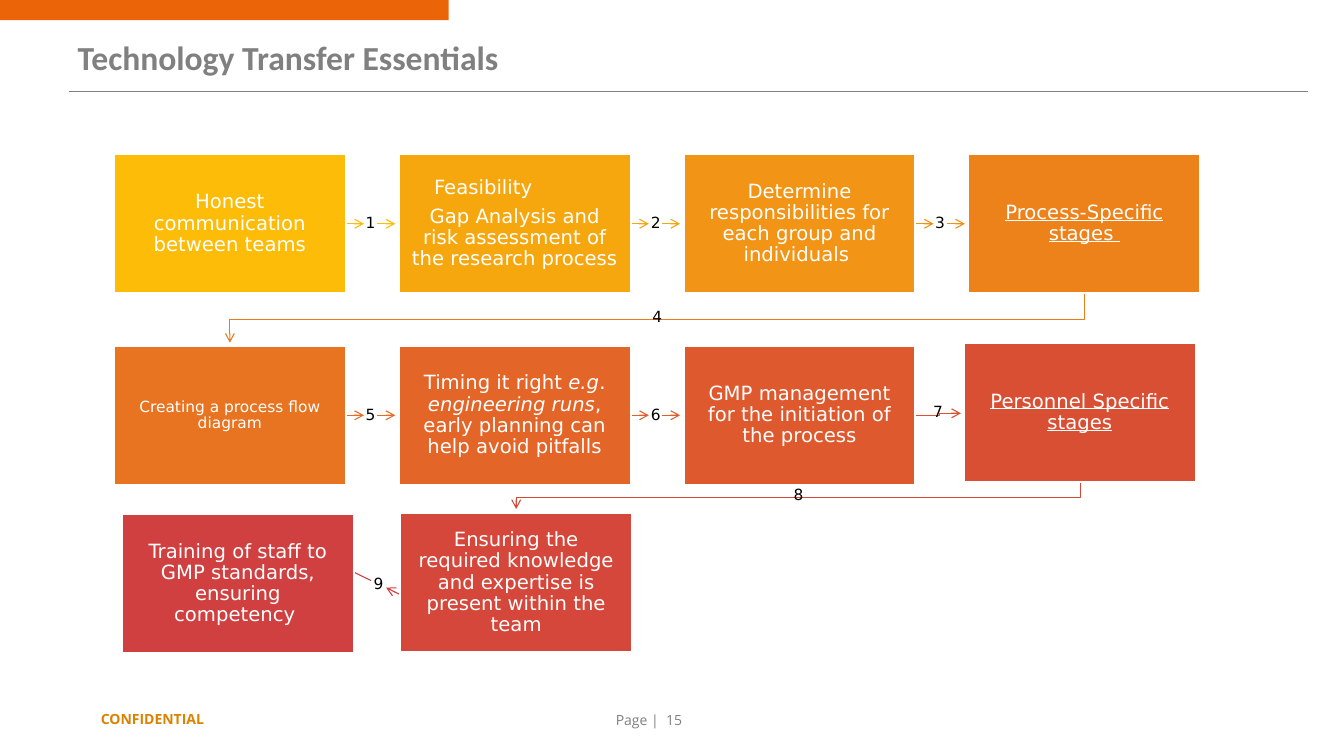
from lxml import etree
from pptx import Presentation
from pptx.dml.color import RGBColor
from pptx.enum import shapes, text
from pptx.oxml import ns
from pptx.util import Inches, Pt

COLORS = {"accent": "EC6408", "gray": "808080", "confidential": "DB8300",
          "white": "FFFFFF", "black": "000000"}
BOX_WIDTH, BOX_HEIGHT = 2.3, 1.38
COLUMNS = [1.13 + 2.825 * i for i in range(4)]
ROWS = [1.53, 3.43]

prs = Presentation()
prs.slide_width, prs.slide_height = Inches(13.33), Inches(7.5)
slide = prs.slides.add_slide(prs.slide_layouts[5])


def style_line(item, color, width, arrow=False):
    item.line.color.rgb = RGBColor.from_string(color)
    item.line.width = Pt(width)
    if arrow:
        etree.SubElement(item.line._get_or_add_ln(), ns.qn("a:tailEnd"), type="arrow")
    if not item._element.spPr.findall(ns.qn("a:effectLst")):
        etree.SubElement(item._element.spPr, ns.qn("a:effectLst"))


def write(frame, lines, font, size, color, align, margins=(0.1, 0.05), bold=False):
    frame.word_wrap = True
    frame.vertical_anchor = text.MSO_ANCHOR.MIDDLE
    frame.margin_left = frame.margin_right = Inches(margins[0])
    frame.margin_top = frame.margin_bottom = Inches(margins[1])
    for i, line in enumerate(lines):
        paragraph = frame.paragraphs[0] if i == 0 else frame.add_paragraph()
        paragraph.alignment = align
        for j, part in enumerate(line.split("*")):
            run = paragraph.add_run()
            run.text = part
            run.font.name, run.font.size = font, Pt(size)
            run.font.bold, run.font.italic = bold, j % 2 == 1
            run.font.color.rgb = RGBColor.from_string(color)


LEFT, CENTER, RIGHT = text.PP_ALIGN.LEFT, text.PP_ALIGN.CENTER, text.PP_ALIGN.RIGHT

title = slide.shapes.title
title.left, title.top, title.width, title.height = map(Inches, (0.67, 0.32, 12, 0.5))
write(title.text_frame, ["Technology Transfer Essentials"], "Calibri", 24,
      COLORS["gray"], LEFT, bold=True)

accent_bar = slide.shapes.add_shape(shapes.MSO_SHAPE.RECTANGLE, 0, 0, Inches(4.45), Inches(0.2))
accent_bar.shadow.inherit = False
accent_bar.fill.solid()
accent_bar.fill.fore_color.rgb = RGBColor.from_string(COLORS["accent"])
accent_bar.line.fill.background()

title_rule = slide.shapes.add_connector(
    shapes.MSO_CONNECTOR.STRAIGHT, Inches(0.68), Inches(0.91), Inches(12.97), Inches(0.91))
style_line(title_rule, COLORS["gray"], 0.75)

for left, top, width, wording, color, align, bold in [
    (6.01, 7.02, 1.95, "Page |  15", "gray", LEFT, False),
    (0.44, 7.01, 1.68, "CONFIDENTIAL", "confidential", RIGHT, True),
]:
    footer = slide.shapes.add_textbox(Inches(left), Inches(top), Inches(width), Inches(0.24))
    write(footer.text_frame, [wording], "Open Sans", 10, COLORS[color], align, bold=bold)

links = [
    ("EB7C1E", [[(10.76, 2.9), (10.76, 3.17), (2.28, 3.17), (2.28, 3.4)]]),
    ("DB5132", [[(9.08, 4.12), (9.32, 4.12), (9.32, 4.1), (9.53, 4.1)]]),
    ("D54839", [[(10.72, 4.79), (10.72, 4.94), (5.12, 4.94), (5.12, 5.05)]]),
    ("D04040", [[(5.12, 6.47), (3.83, 5.83)], [(3.68, 5.76), (2.39, 5.12)]]),
]
for row, column, color in [(0, 0, "FCBC08"), (0, 1, "F6A40F"), (0, 2, "F18F16"),
                           (1, 0, "E56C25"), (1, 1, "E05D2C")]:
    start, y = COLUMNS[column] + BOX_WIDTH, ROWS[row] + BOX_HEIGHT / 2
    links.append((color, [[(start, y), (start + 0.18, y)],
                          [(start + 0.31, y), (start + 0.49, y)]]))

for color, pieces in links:
    first, *others = [[(Inches(x), Inches(y)) for x, y in piece] for piece in pieces]
    outline = slide.shapes.build_freeform(*first[0])
    outline.add_line_segments(first[1:], close=False)
    for piece in others:
        outline.move_to(*piece[0])
        outline.add_line_segments(piece[1:], close=False)
    link = outline.convert_to_shape()
    if link.height == 0:
        link.top, link.height = link.top - Inches(0.05), Inches(0.1)
        for route in link._element.iter(ns.qn("a:path")):
            route.set("h", str(Inches(0.1)))
            for point in route.iter(ns.qn("a:pt")):
                point.set("y", str(Inches(0.05)))
    link.shadow.inherit = False
    link.fill.background()
    style_line(link, color, 0.79, arrow=True)

steps = [
    (COLUMNS[0], ROWS[0], "FCBC08", ["Honest communication between teams"]),
    (COLUMNS[1], ROWS[0], "F7A70E",
     ["Feasibility", "Gap Analysis and risk assessment of the research process"]),
    (COLUMNS[2], ROWS[0], "F29415",
     ["Determine responsibilities for each group and individuals "]),
    (COLUMNS[3], ROWS[0], "ED821B", ["Process-Specific stages "]),
    (COLUMNS[0], ROWS[1], "E87321", ["Creating a process flow diagram"]),
    (COLUMNS[1], ROWS[1], "E36528",
     ["Timing it right *e.g*. *engineering runs*, early planning can help avoid pitfalls"]),
    (COLUMNS[2], ROWS[1], "DE592E", ["GMP management for the initiation of the process"]),
    (9.56, 3.4, "D94F34", ["Personnel Specific stages"]),
    (3.97, 5.09, "D5473A",
     ["Ensuring the required knowledge and expertise is present within the team"]),
    (1.21, 5.1, "D04040", ["Training of staff to GMP standards, ensuring competency "]),
]
for left, top, fill, lines in steps:
    step = slide.shapes.add_shape(shapes.MSO_SHAPE.RECTANGLE, Inches(left), Inches(top),
                                  Inches(BOX_WIDTH), Inches(BOX_HEIGHT))
    step.shadow.inherit = False
    step.fill.solid()
    step.fill.fore_color.rgb = RGBColor.from_string(fill)
    style_line(step, COLORS["white"], 1.5)
    size = 11 if lines[0].startswith("Creating") else 14
    write(step.text_frame, lines, "DejaVu Sans", size, COLORS["white"], CENTER, (0.11, 0.12))
    for paragraph in step.text_frame.paragraphs:
        paragraph.line_spacing = 0.9
        paragraph.space_after = Pt(5)
        for run in paragraph.runs:
            run.font.underline = "pecific" in run.text
        if paragraph.text == "Feasibility":
            paragraph.alignment = LEFT
            paragraph._p.get_or_add_pPr().set("marL", str(Inches(0.24)))

label_places = [(3.61, 2.13, 0.13), (6.44, 2.13, 0.13), (9.26, 2.13, 0.13),
                (6.31, 3.06, 0.42), (3.61, 4.04, 0.13), (6.44, 4.04, 0.13),
                (9.24, 4.01, 0.13), (7.78, 4.83, 0.28), (3.68, 5.71, 0.15)]
for number, (left, top, width) in enumerate(label_places, 1):
    label = slide.shapes.add_textbox(Inches(left), Inches(top), Inches(width), Inches(0.17))
    write(label.text_frame, [str(number)], "DejaVu Sans", 11, COLORS["black"], CENTER, (0.01, 0))
    label.text_frame.paragraphs[0].line_spacing = 0.9

prs.save("out.pptx")
